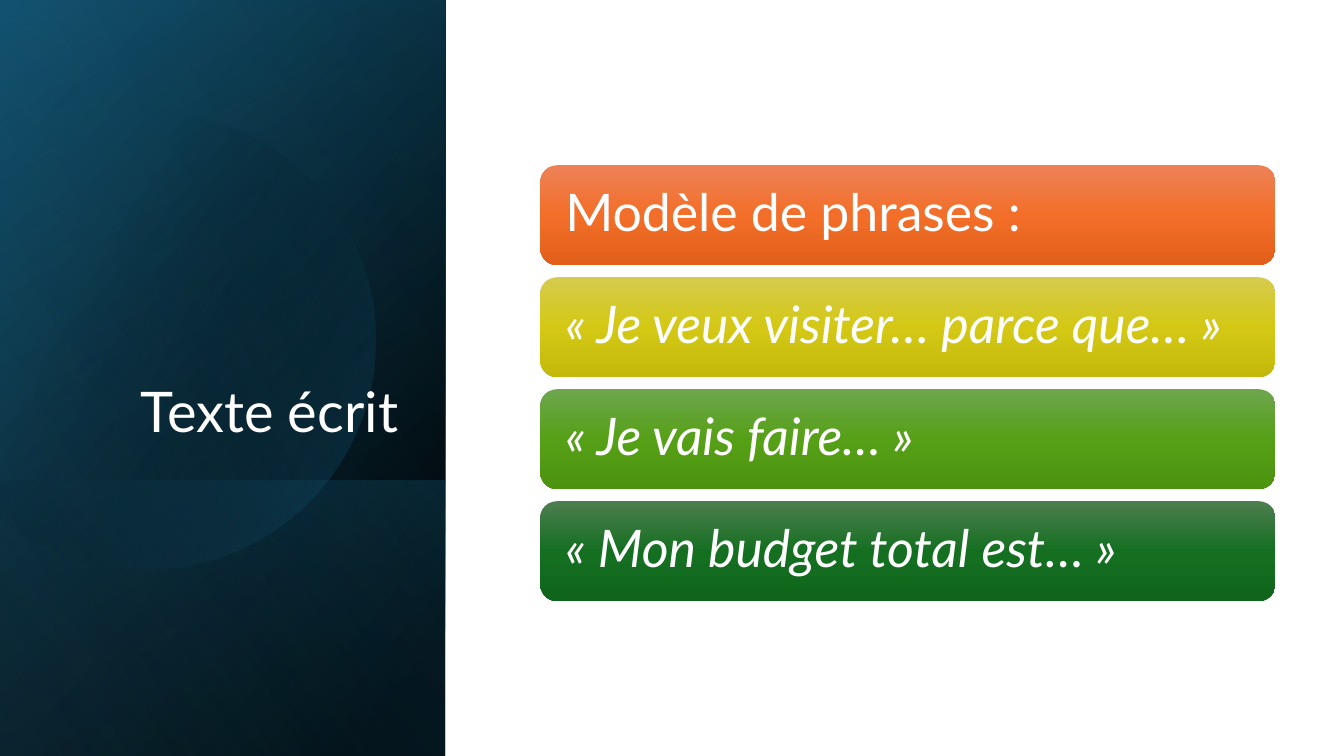
from math import cos, radians, sin

from lxml import etree
from pptx import Presentation
from pptx.dml.color import RGBColor
from pptx.enum.shapes import MSO_SHAPE
from pptx.enum.text import MSO_ANCHOR, MSO_AUTO_SIZE, PP_ALIGN
from pptx.oxml.ns import qn
from pptx.util import Pt

RECT = MSO_SHAPE.RECTANGLE
ROUND = MSO_SHAPE.ROUNDED_RECTANGLE
LEFT, RIGHT = PP_ALIGN.LEFT, PP_ALIGN.RIGHT
MIDDLE, BOTTOM = MSO_ANCHOR.MIDDLE, MSO_ANCHOR.BOTTOM
NO_FIT = MSO_AUTO_SIZE.NONE


def shade(shape, stops, angle):
    fill = etree.Element(qn("a:gradFill"), rotWithShape="1")
    group = etree.SubElement(fill, qn("a:gsLst"))
    for place, tint, alpha in stops:
        stop = etree.SubElement(group, qn("a:gs"), pos=str(place * 1000))
        color = etree.SubElement(stop, qn("a:srgbClr"), val=tint)
        if alpha < 100:
            etree.SubElement(color, qn("a:alpha"), val=str(alpha * 1000))
    etree.SubElement(fill, qn("a:lin"), ang=str(angle * 60000), scaled="0")
    shape._element.spPr.insert(2, fill)
    shape.line.fill.background()
    shape.shadow.inherit = False


def write(shape, text, size, align, anchor, slant, tint):
    frame = shape.text_frame
    frame.text = text
    frame.word_wrap = True
    frame.auto_size = NO_FIT
    frame.vertical_anchor = anchor
    line = frame.paragraphs[0]
    line.alignment = align
    line.line_spacing = 0.9
    font = line.runs[0].font
    font.name = "Lato"
    font.size = Pt(size)
    font.italic = slant
    font.color.rgb = RGBColor.from_string(tint)


deck = Presentation()
deck.slide_width, deck.slide_height = Pt(960), Pt(540)
slide = deck.slides.add_slide(deck.slide_layouts[5])
shapes = slide.shapes

full = (-111, 111, 540, 318)
foot = (60.5, 282.5, 197, 318)
panels = [
    (full, [(8, "000000", 100), (100, "104862", 100)], 50),
    (full, [(0, "000000", 0), (99, "156082", 46)], 30),
    (foot, [(2, "156082", 29), (100, "000000", 30)], 130),
    (None, [(29, "000000", 0), (100, "156082", 43)], 30),
    (full, [(0, "000000", 0), (99, "46B1E1", 11)], 120),
]
for box, stops, angle in panels:
    if box:
        panel = shapes.add_shape(RECT, *map(Pt, box))
        panel.rotation = 90
        panel._element.spPr.find(qn("a:xfrm")).set("flipH", "1")
    else:
        arc = [
            (Pt(104 + 164 * cos(radians(turn))), Pt(243 + 164 * sin(radians(turn))))
            for turn in range(-129, 130, 3)
        ]
        path = shapes.build_freeform(*arc[0])
        path.add_line_segments(arc[1:], close=True)
        panel = path.convert_to_shape()
    shade(panel, stops, angle)

title = shapes.title
title.left, title.top, title.width, title.height = map(Pt, (46, 132.5, 245.5, 188.5))
write(title, "Texte écrit", 40, RIGHT, BOTTOM, False, "FFFFFF")
shapes._spTree.append(title._element)

bars = [
    ("Modèle de phrases :", False, "ED8257", "F26E29", "E25F1A"),
    ("« Je veux visiter… parce que… »", True, "D5CB4E", "D4C815", "C4B90B"),
    ("« Je vais faire… »", True, "6DA64E", "56A017", "4C930F"),
    ("« Mon budget total est… »", True, "4D7E50", "156F21", "0F661B"),
]
for row, (text, slant, *tints) in enumerate(bars):
    bar = shapes.add_shape(ROUND, Pt(386), Pt(118 + 80 * row), Pt(525), Pt(71.3))
    shade(bar, [(50 * step, tint, 100) for step, tint in enumerate(tints)], 90)
    write(bar, text, 37, LEFT, MIDDLE, slant, "FFFFFF")
    frame = bar.text_frame
    frame.margin_left = frame.margin_right = Pt(14.4)
    frame.margin_top = frame.margin_bottom = Pt(14.4)

deck.save("out.pptx")
